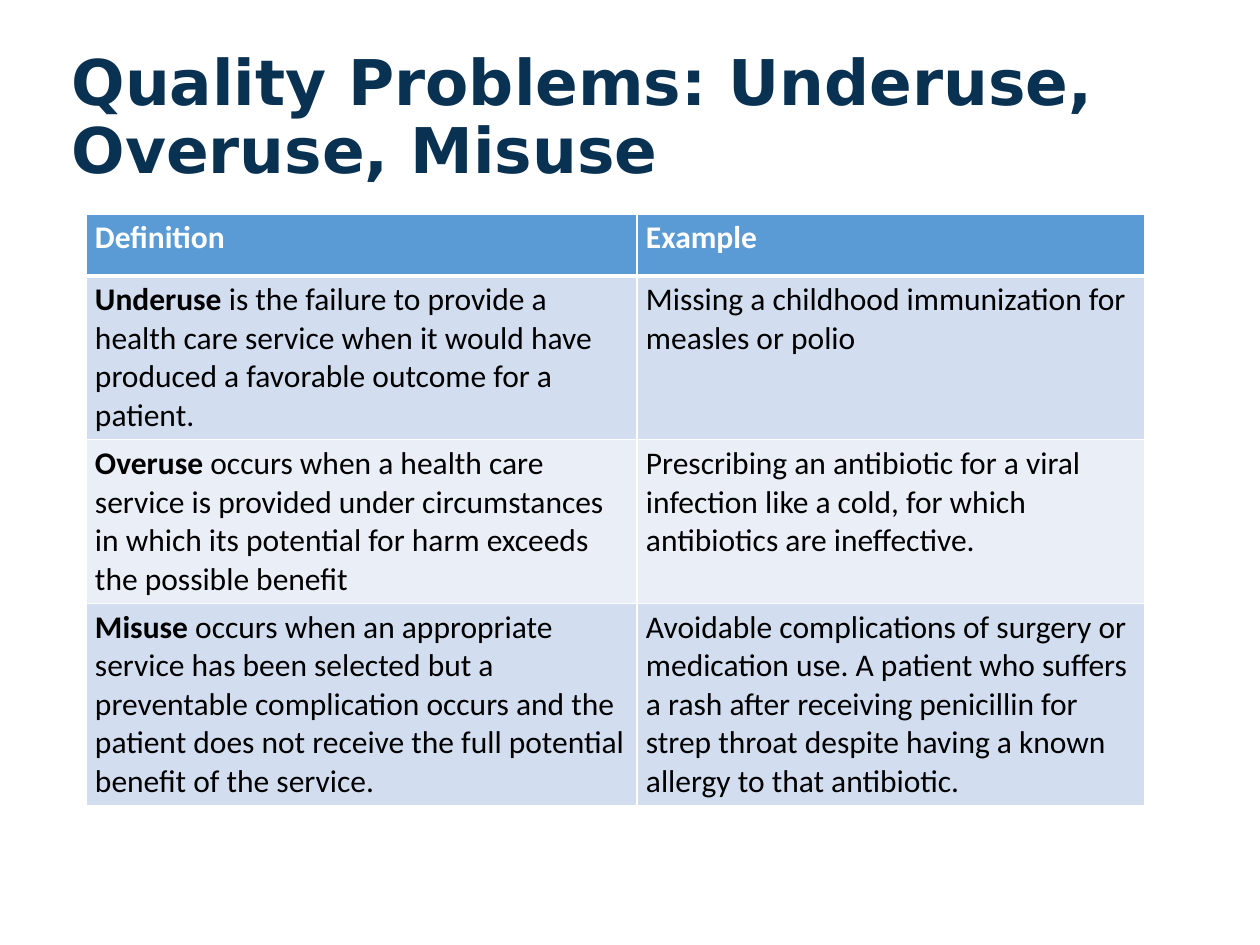
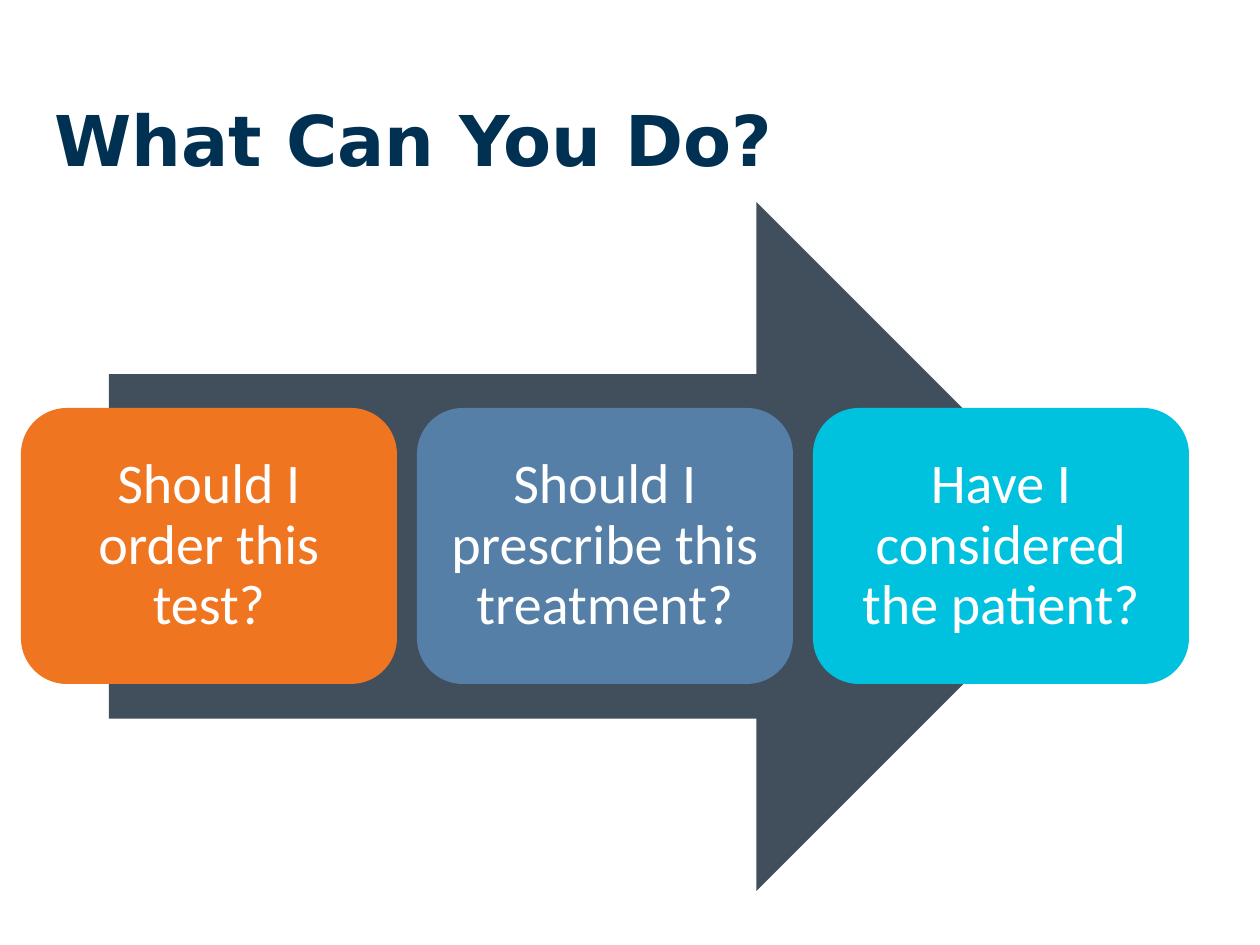
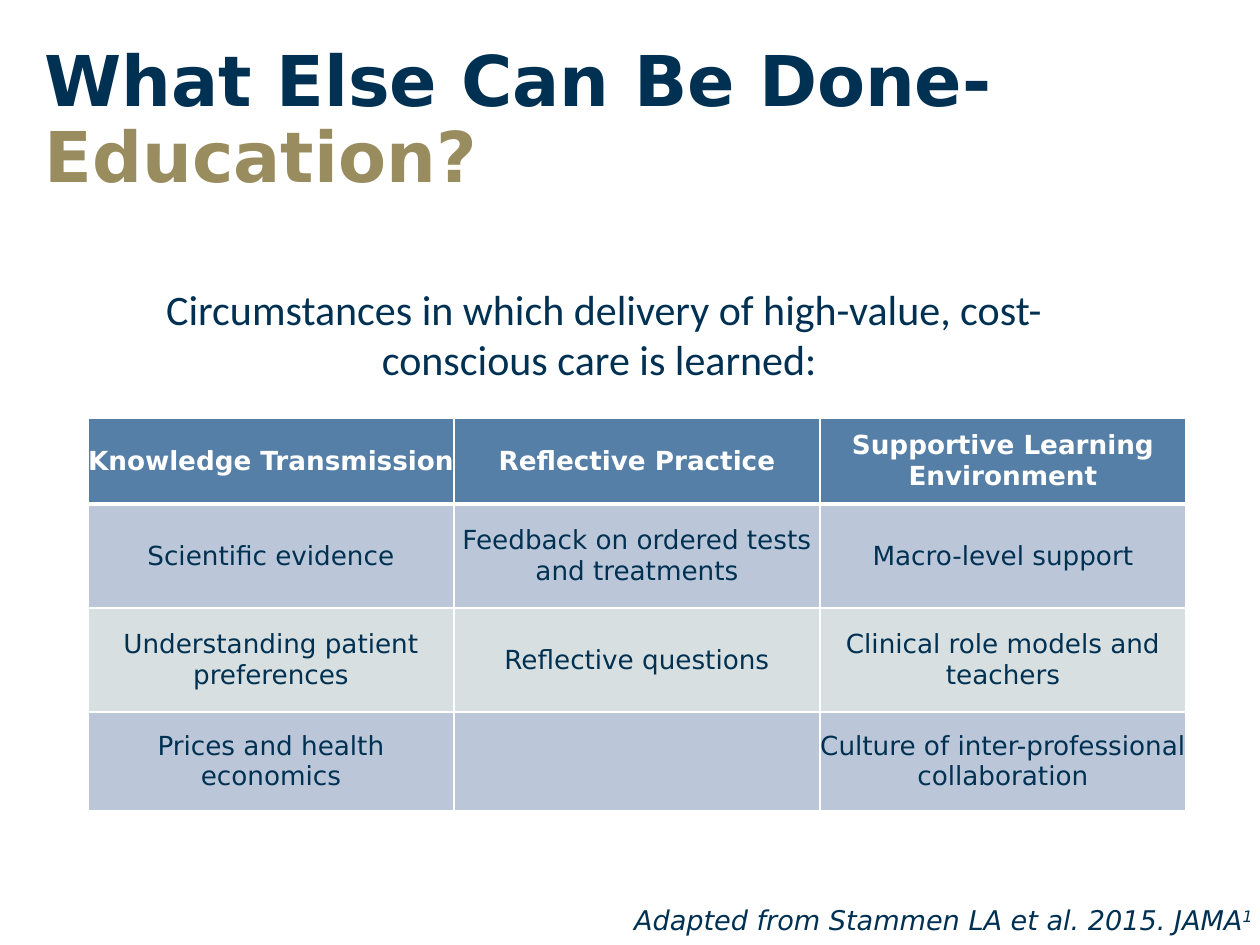
from lxml import etree
from pptx import Presentation
from pptx.dml.color import RGBColor
from pptx.enum.shapes import MSO_SHAPE
from pptx.enum.text import MSO_ANCHOR, MSO_AUTO_SIZE, PP_ALIGN
from pptx.oxml.ns import qn
from pptx.util import Pt

SCALE = 914400 / 126  # EMU per px

LEFT, MID, RIGHT = PP_ALIGN.LEFT, PP_ALIGN.CENTER, PP_ALIGN.RIGHT
TOP, CENTER, BOTTOM = MSO_ANCHOR.TOP, MSO_ANCHOR.MIDDLE, MSO_ANCHOR.BOTTOM
ARROW, ROUND = MSO_SHAPE.RIGHT_ARROW, MSO_SHAPE.ROUNDED_RECTANGLE
FIXED = MSO_AUTO_SIZE.NONE

SANS, BODY = "DejaVu Sans", "Calibri"

WHITE = RGBColor(0xFF, 0xFF, 0xFF)
BLACK = RGBColor(0x00, 0x00, 0x00)
NAVY = RGBColor(0x00, 0x31, 0x52)
INK = RGBColor(0x09, 0x31, 0x52)
GOLD = RGBColor(0x99, 0x8D, 0x5F)
SLATE = RGBColor(0x41, 0x4F, 0x5C)
ORANGE = RGBColor(0xEF, 0x75, 0x21)
STEEL = RGBColor(0x55, 0x7F, 0xA6)
CYAN = RGBColor(0x00, 0xC1, 0xDE)
BLUE = RGBColor(0x5B, 0x9B, 0xD5)
PALE = RGBColor(0xD2, 0xDE, 0xEF)
FAINT = RGBColor(0xEA, 0xEF, 0xF7)
MIST = RGBColor(0xBB, 0xC7, 0xD9)
FOG = RGBColor(0xD8, 0xDF, 0xE0)


def px(*sizes):
    return [round(size * SCALE) for size in sizes]


class Deck:
    def __init__(self):
        self.prs = Presentation()
        self.prs.slide_width, self.prs.slide_height = px(1260, 945)
        self.slide = None

    def put(self, frame, runs, size, color, face=BODY, align=LEFT,
            bold=False, italic=False, space=None):
        """Fill the first paragraph and return it."""
        para = frame.paragraphs[0]
        para.alignment = align
        if space:
            para.line_spacing = space
        font = para.font
        font.name, font.size = face, Pt(size)
        font.bold, font.italic = bold, italic
        font.color.rgb = color
        for run in runs:
            para.add_run().text = run
        return para

    def title(self, box, *runs, size=40, color=NAVY):
        """Start a slide with its title."""
        self.slide = self.prs.slides.add_slide(self.prs.slide_layouts[5])
        head = self.slide.shapes.title
        head.left, head.top, head.width, head.height = px(*box)
        frame = head.text_frame
        frame.auto_size, frame.vertical_anchor = FIXED, BOTTOM
        return self.put(frame, runs, size, color, SANS, bold=True, space=0.9)

    def text(self, box, *runs, **style):
        frame = self.slide.shapes.add_textbox(*px(*box)).text_frame
        frame.word_wrap = True
        return self.put(frame, runs, **style)

    def shape(self, kind, box, fill):
        item = self.slide.shapes.add_shape(kind, *px(*box))
        item.shadow.inherit = False
        item.fill.solid()
        item.fill.fore_color.rgb = fill
        item.line.fill.background()
        return item

    def card(self, box, fill, label):
        frame = self.shape(ROUND, box, fill).text_frame
        frame.word_wrap, frame.vertical_anchor = True, CENTER
        (frame.margin_left, frame.margin_right,
         frame.margin_top, frame.margin_bottom) = px(17, 17, 17, 17)
        self.put(frame, [label], 32, WHITE, align=MID, space=0.9)

    def edge(self, cell, side, width):
        line = etree.SubElement(cell._tc.get_or_add_tcPr(), qn("a:ln" + side),
                                w=str(Pt(width)))
        fill = etree.SubElement(line, qn("a:solidFill"))
        etree.SubElement(fill, qn("a:srgbClr"), val=str(WHITE))

    def table(self, spot, cols, tall, rows, fills, color, pad=(0, 0),
              anchor=TOP, **style):
        """Each cell is a tuple of runs; a first run of two is bold."""
        box = (*spot, sum(cols), sum(tall))
        grid = self.slide.shapes.add_table(len(rows), len(cols), *px(*box)).table
        for col, wide in zip(grid.columns, px(*cols)):
            col.width = wide
        for row, high in zip(grid.rows, px(*tall)):
            row.height = high
        head, odd, even = fills
        for r, row in enumerate(rows):
            fill = head if r == 0 else odd if r % 2 else even
            for c, runs in enumerate(row):
                cell = grid.cell(r, c)
                cell.margin_left, cell.margin_top = px(*pad)
                cell.margin_right, cell.margin_bottom = px(*pad)
                cell.vertical_anchor = anchor
                for side in "LRTB":
                    thick = (r, side) in ((0, "B"), (1, "T"))
                    self.edge(cell, side, 3 if thick else 1)
                cell.fill.solid()
                cell.fill.fore_color.rgb = fill
                para = self.put(cell.text_frame, runs,
                                color=color if r else WHITE,
                                bold=r == 0, **style)
                if len(runs) > 1:
                    para.runs[0].font.bold = True


def main():
    deck = Deck()

    # Quality problems
    deck.title((59, 84, 1187, 110), "Quality Problems: Underuse, Overuse, Misuse",
               size=36, color=INK)
    deck.table((86, 214), (551, 508), (62, 163, 163, 201), [
        [("Definition",), ("Example",)],
        [("Underuse", " is the failure to provide a health care service when it "
          "would have produced a favorable outcome for a patient."),
         ("Missing a childhood immunization for measles or polio",)],
        [("Overuse", " occurs when a health care service is provided under "
          "circumstances in which its potential for harm exceeds the possible benefit"),
         ("Prescribing an antibiotic for a viral infection like a cold, for which "
          "antibiotics are ineffective.",)],
        [("Misuse", " occurs when an appropriate service has been selected but a "
          "preventable complication occurs and the patient does not receive the "
          "full potential benefit of the service."),
         ("Avoidable complications of surgery or medication use. A patient who "
          "suffers a rash after receiving penicillin for strep throat despite "
          "having a known allergy to that antibiotic.",)],
    ], (BLUE, PALE, FAINT), BLACK, pad=(9, 5), size=18)

    # Questions along an arrow
    deck.title((42, 10, 1057, 178), "What Can You Do?")
    deck.shape(ARROW, (109, 202, 992, 689), SLATE)
    cards = [(ORANGE, "Should I order this test?"),
             (STEEL, "Should I prescribe this treatment?"),
             (CYAN, "Have I considered the patient?")]
    for i, (fill, label) in enumerate(cards):
        deck.card((21 + 396 * i, 408, 376, 276), fill, label)

    # Education
    head = deck.title((32, 26, 1057, 178), "What Else Can Be Done-", "Education?")
    head.runs[1].font.color.rgb = GOLD
    rows = [
        ("Knowledge Transmission", "Reflective Practice",
         "Supportive Learning Environment"),
        ("Scientific evidence", "Feedback on ordered tests and treatments",
         "Macro-level support"),
        ("Understanding patient preferences", "Reflective questions",
         "Clinical role models and teachers"),
        ("Prices and health economics", "",
         "Culture of inter-professional collaboration"),
    ]
    deck.table((88, 418), (366, 366, 366), (86, 104, 104, 99),
               [[(word,) if word else () for word in row] for row in rows],
               (STEEL, MIST, FOG), NAVY, anchor=CENTER,
               size=15, face=SANS, align=MID)
    note = deck.text((367, 897, 898, 48),
                     "Adapted from Stammen LA et al. 2015. JAMA", "1",
                     size=15.5, color=NAVY, face=SANS, align=RIGHT, italic=True)
    note.runs[1].font._element.set("baseline", "30000")
    deck.text((79, 277, 1050, 115),
              "Circumstances in which delivery of high-value, cost-conscious care "
              "is learned: ", size=24, color=NAVY, align=MID)

    deck.prs.save("out.pptx")


if __name__ == "__main__":
    main()
